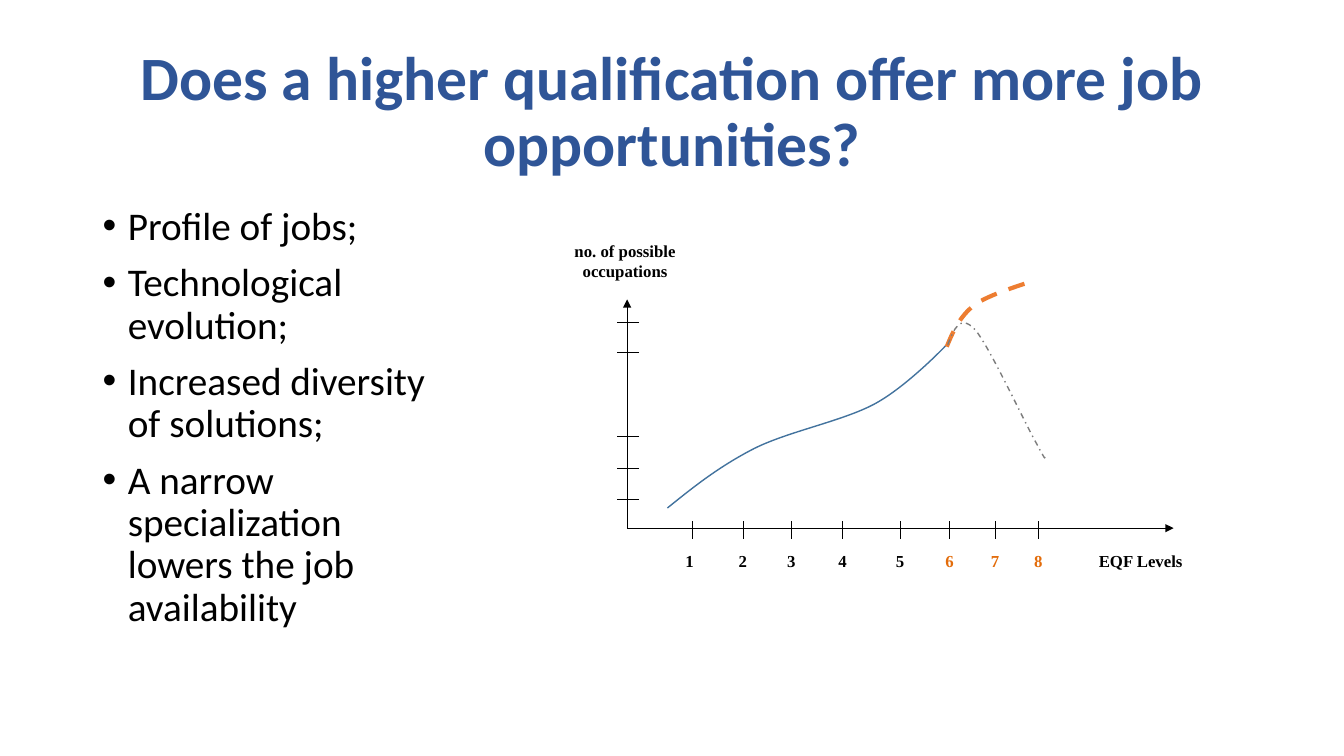
from dataclasses import dataclass
from typing import Any, NamedTuple

import pptx
import pptx.util
import pptx.dml.color
import pptx.enum.dml
import pptx.enum.shapes
import pptx.enum.text
import pptx.oxml
import pptx.oxml.ns

Inches = pptx.util.Inches
Align = pptx.enum.text.PP_ALIGN
Dash = pptx.enum.dml.MSO_LINE
qn = pptx.oxml.ns.qn


# Theme: colours, fonts and sizes
@dataclass(frozen=True)
class Theme:
    ink: str = "000000"
    paper: str = "FFFFFF"
    title: str = "2F5597"
    high: str = "E36C0A"
    rise: str = "43739E"
    hope: str = "ED7D31"
    fall: str = "7C7C7C"
    sans: str = "Calibri"
    serif: str = "Times New Roman"
    head: int = 44
    body: int = 28
    small: int = 12
    thin: float = 0.75


theme = Theme()


# Slide parts
class Line(NamedTuple):
    x1: float
    y1: float
    x2: float
    y2: float
    arrow: bool = False


class Curve(NamedTuple):
    start: tuple[float, float]
    bends: list[tuple[float, float]]  # three points per cubic segment
    color: str
    width: float
    dash: Any = None


class Label(NamedTuple):
    box: tuple[float, float, float, float]
    runs: list[tuple[str, str]]  # text and colour
    align: Any
    tabs: tuple[float, ...] = ()


ORIGIN = (6.22, 5.24)
LEVELS = (6.87, 7.37, 7.85, 8.36, 8.93, 9.42, 9.87, 10.3)
COUNTS = (3.2, 3.5, 4.33, 4.65, 4.96)
ROW = 6.7
INSET = 0.1

POINTS = ["Profile of jobs;", "Technological evolution;",
          "Increased diversity of solutions;",
          "A narrow specialization lowers the job availability"]

LINES = [Line(*ORIGIN, 11.64, 5.24, True), Line(*ORIGIN, 6.22, 2.97, True)]
LINES += [Line(x, 5.17, x, 5.35) for x in LEVELS]
LINES += [Line(6.34, y, 6.12, y) for y in COUNTS]

LABELS = [
    Label((10.8, 5.41, 1.1, 0.43), [("EQF Levels", theme.ink)], Align.JUSTIFY),
    Label((ROW, 5.41, 4.1, 0.37),
          [("1\t2\t3\t4\t5\t", theme.ink), ("6\t7\t8", theme.high)],
          Align.LEFT, tuple(x - ROW - INSET for x in LEVELS[1:])),
    Label((5.56, 2.34, 1.28, 0.55),
          [("no. of possible occupations", theme.ink)], Align.CENTER),
]

CURVES = [
    Curve((6.62, 5.04), [(6.88, 4.83), (7.13, 4.63), (7.48, 4.45),
                         (7.82, 4.28), (8.35, 4.18), (8.67, 4.01),
                         (8.99, 3.84), (9.38, 3.43), (9.38, 3.43)],
          theme.rise, 1),
    Curve((9.39, 3.44), [(9.45, 3.29), (9.52, 3.14), (9.66, 3.03),
                         (9.8, 2.92), (10.22, 2.8), (10.27, 2.78)],
          theme.hope, 3, Dash.DASH),
    Curve((9.4, 3.42), [(9.46, 3.27), (9.52, 3.11), (9.67, 3.27),
                        (9.81, 3.43), (10.16, 4.19), (10.28, 4.4),
                        (10.39, 4.61), (10.36, 4.53), (10.36, 4.53)],
          theme.fall, 1, Dash.DASH_DOT),
]


# Helpers
def rgb(code: str) -> Any:
    return pptx.dml.color.RGBColor.from_string(code)


def apply(thing: Any, **form: Any) -> None:
    for name, value in form.items():
        setattr(thing, name, value)


def add_run(para: Any, text: str, face: str, size: int, color: str,
            bold: bool = False) -> None:
    run = para.add_run()
    run.text = text
    apply(run.font, name=face, size=pptx.util.Pt(size), bold=bold)
    run.font.color.rgb = rgb(color)


def stroke(line: Any, color: str, width: float) -> None:
    line.color.rgb = rgb(color)
    line.width = pptx.util.Pt(width)


def add_node(host: Any, tag: str, **attrs: str) -> Any:
    node = pptx.oxml.parse_xml(f"<{tag} {pptx.oxml.ns.nsdecls('a')}/>")
    for name, value in attrs.items():
        node.set(name, value)
    host.append(node)
    return node


# Drawing
def draw_title(slide: Any) -> None:
    shape = slide.shapes.title
    apply(shape, left=Inches(0.92), top=Inches(0.4),
          width=Inches(11.5), height=Inches(1.45))
    frame = shape.text_frame
    apply(frame, word_wrap=True, auto_size=pptx.enum.text.MSO_AUTO_SIZE.NONE,
          vertical_anchor=pptx.enum.text.MSO_ANCHOR.MIDDLE)
    para = frame.paragraphs[0]
    apply(para, alignment=Align.CENTER, line_spacing=0.9)
    add_run(para, "Does a higher qualification offer more job opportunities?",
            theme.sans, theme.head, theme.title, True)


def draw_list(slide: Any) -> None:
    box = slide.shapes.add_textbox(*map(Inches, (0.92, 2, 3.63, 4.76)))
    frame = box.text_frame
    frame.word_wrap = True
    for i, text in enumerate(POINTS):
        para = frame.add_paragraph() if i else frame.paragraphs[0]
        apply(para, line_spacing=0.9, space_before=pptx.util.Pt(10))
        props = para._p.get_or_add_pPr()
        props.set("marL", str(Inches(0.25)))
        props.set("indent", str(Inches(-0.25)))
        add_node(props, "a:buFont", typeface="Arial")
        add_node(props, "a:buChar", char="•")
        add_run(para, text, theme.sans, theme.body, theme.ink)


def draw_line(group: Any, item: Line) -> None:
    link = group.shapes.add_connector(
        pptx.enum.shapes.MSO_CONNECTOR.STRAIGHT, *map(Inches, item[:4]))
    stroke(link.line, theme.ink, theme.thin)
    if item.arrow:
        add_node(link.line._get_or_add_ln(), "a:tailEnd", type="triangle")
    add_node(link._element.spPr, "a:effectLst")


def draw_label(group: Any, item: Label) -> None:
    shape = group.shapes.add_shape(
        pptx.enum.shapes.MSO_SHAPE.RECTANGLE, *map(Inches, item.box))
    shape.shadow.inherit = False
    shape.fill.solid()
    shape.fill.fore_color.rgb = rgb(theme.paper)
    stroke(shape.line, theme.paper, theme.thin)
    frame = shape.text_frame
    apply(frame, word_wrap=True, margin_left=Inches(INSET),
          vertical_anchor=pptx.enum.text.MSO_ANCHOR.TOP)
    para = frame.paragraphs[0]
    para.alignment = item.align
    if item.tabs:
        stops = add_node(para._p.get_or_add_pPr(), "a:tabLst")
        for stop in item.tabs:
            add_node(stops, "a:tab", pos=str(Inches(stop)), algn="ctr")
    for text, color in item.runs:
        add_run(para, text, theme.serif, theme.small, color, True)


def draw_curve(group: Any, item: Curve) -> None:
    pen = group.shapes.build_freeform(*map(Inches, item.start))
    pen.add_line_segments([(Inches(x), Inches(y)) for x, y in item.bends],
                          close=False)
    shape = pen.convert_to_shape()
    shape.shadow.inherit = False
    shape.fill.background()
    stroke(shape.line, item.color, item.width)
    if item.dash is not None:
        shape.line.dash_style = item.dash
    # Join each three straight steps into one cubic segment
    track = next(shape._element.iter(qn("a:path")))
    steps = track.findall(qn("a:lnTo"))
    for i in range(0, len(steps), 3):
        bend = add_node(track, "a:cubicBezTo")
        for step in steps[i:i + 3]:
            bend.append(step[0])
            track.remove(step)


def main() -> None:
    deck = pptx.Presentation()
    apply(deck, slide_width=Inches(13.33), slide_height=Inches(7.5))
    slide = deck.slides.add_slide(deck.slide_layouts[5])
    draw_title(slide)
    draw_list(slide)
    graph = slide.shapes.add_group_shape()
    for draw, items in ((draw_line, LINES), (draw_label, LABELS),
                        (draw_curve, CURVES)):
        for item in items:
            draw(graph, item)
    deck.save("out.pptx")


if __name__ == "__main__":
    main()
